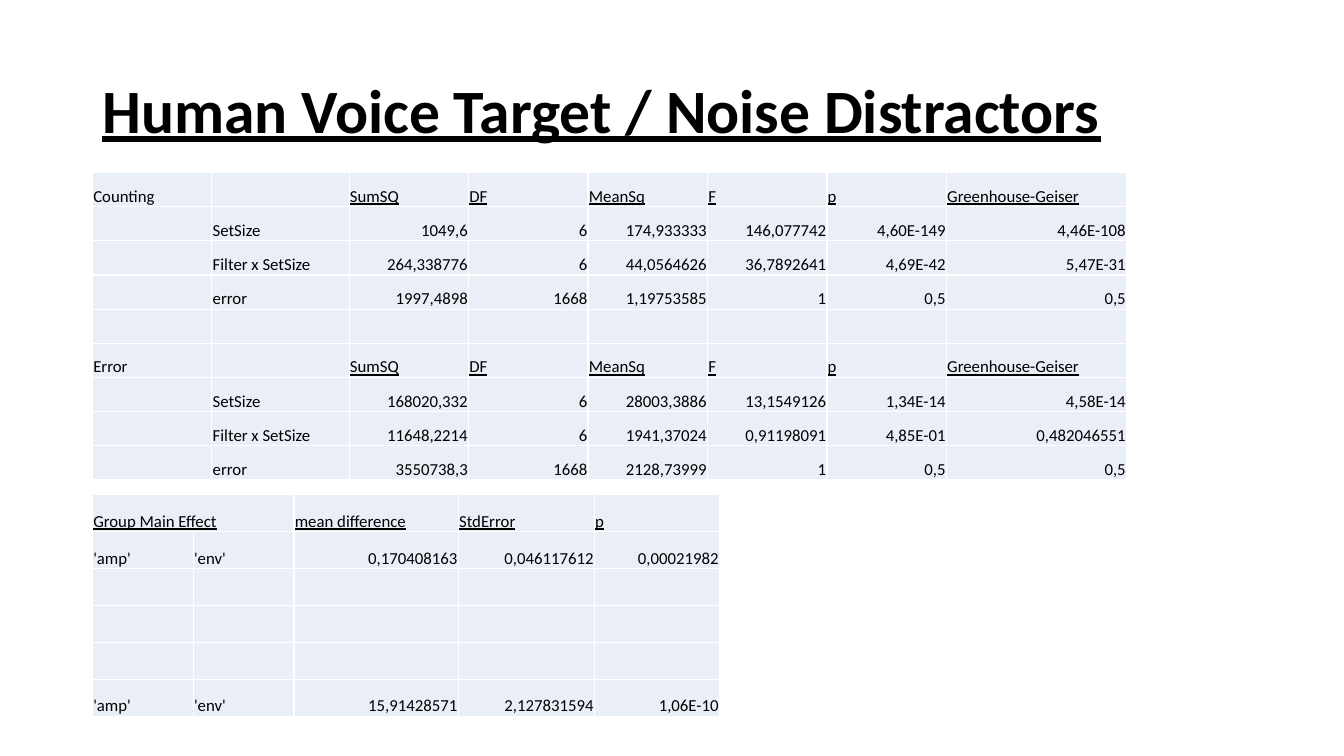
from dataclasses import dataclass

from lxml import etree
from pptx import Presentation
from pptx import util as u
from pptx.dml import color
from pptx.enum import text
from pptx.oxml import ns


@dataclass(frozen=True)
class Theme:
    font: str = "Calibri"
    ink: str = "000000"
    cell: str = "EAEFF7"
    border: str = "FFFFFF"
    title_size: int = 44
    table_size: int = 12
    border_width: int = 1


STATISTICS = ["SumSQ", "DF", "MeanSq", "F", "p", "Greenhouse-Geiser"]
COMPARISON = ["Group Main Effect", "mean difference", "StdError", "p"]
HEADINGS = {*STATISTICS, *COMPARISON}

ANOVA_ROWS = [
    ["Counting", "", *STATISTICS],
    ["", "SetSize", "1049,6", "6", "174,933333", "146,077742", "4,60E-149", "4,46E-108"],
    ["", "Filter x SetSize", "264,338776", "6", "44,0564626", "36,7892641", "4,69E-42", "5,47E-31"],
    ["", "error", "1997,4898", "1668", "1,19753585", "1", "0,5", "0,5"],
    [""] * 8,
    ["Error", "", *STATISTICS],
    ["", "SetSize", "168020,332", "6", "28003,3886", "13,1549126", "1,34E-14", "4,58E-14"],
    ["", "Filter x SetSize", "11648,2214", "6", "1941,37024", "0,91198091", "4,85E-01", "0,482046551"],
    ["", "error", "3550738,3", "1668", "2128,73999", "1", "0,5", "0,5"],
]
GROUP_ROWS = [
    [COMPARISON[0], "", *COMPARISON[1:]],
    ["'amp'", "'env'", "0,170408163", "0,046117612", "0,00021982"],
    *[[""] * 5] * 3,
    ["'amp'", "'env'", "15,91428571", "2,127831594", "1,06E-10"],
]


class SlideBuilder:
    def __init__(self, slide, theme):
        self.slide = slide
        self.theme = theme

    def style(self, p, size, bold=False, underline=False):
        p.font.name = self.theme.font
        p.font.size = u.Pt(size)
        p.font.bold = bold
        p.font.underline = underline
        p.font.color.rgb = color.RGBColor.from_string(self.theme.ink)

    def title(self, words, left, top, width, height):
        tf = self.slide.shapes.add_textbox(*map(u.Cm, (left, top, width, height))).text_frame
        tf.word_wrap = True
        tf.vertical_anchor = text.MSO_ANCHOR.MIDDLE
        p = tf.paragraphs[0]
        p.text = words
        p.line_spacing = 0.9
        self.style(p, self.theme.title_size, bold=True, underline=True)

    def borders(self, cell):
        tc_pr = cell._tc.get_or_add_tcPr()
        for i, side in enumerate(("lnL", "lnR", "lnT", "lnB")):
            ln = etree.Element(ns.qn(f"a:{side}"), w=str(u.Pt(self.theme.border_width)))
            fill = etree.SubElement(ln, ns.qn("a:solidFill"))
            etree.SubElement(fill, ns.qn("a:srgbClr"), val=self.theme.border)
            tc_pr.insert(i, ln)

    def cell(self, cell, words):
        cell.margin_left = cell.margin_right = cell.margin_top = u.Cm(0.02)
        cell.margin_bottom = 0
        cell.vertical_anchor = text.MSO_ANCHOR.BOTTOM
        cell.fill.solid()
        cell.fill.fore_color.rgb = color.RGBColor.from_string(self.theme.cell)
        self.borders(cell)
        p = cell.text_frame.paragraphs[0]
        p.text = words
        self.style(p, self.theme.table_size, underline=words in HEADINGS)
        if words[:1].isdigit():
            p.alignment = text.PP_ALIGN.RIGHT

    def table(self, rows, left, top, widths, row_height):
        frame = self.slide.shapes.add_table(
            len(rows), len(widths), u.Cm(left), u.Cm(top),
            u.Cm(sum(widths)), u.Cm(row_height * len(rows)),
        )
        table = frame.table
        table.first_row = table.horz_banding = False
        for column, width in zip(table.columns, widths):
            column.width = u.Cm(width)
        for row, values in zip(table.rows, rows):
            row.height = u.Cm(row_height)
            for cell, words in zip(row.cells, values):
                self.cell(cell, words)
        return table


def main():
    prs = Presentation()
    prs.slide_width, prs.slide_height = u.Cm(33.87), u.Cm(19.05)
    s = SlideBuilder(prs.slides.add_slide(prs.slide_layouts[6]), Theme())
    left = 2.33
    s.title("Human Voice Target / Noise Distractors", left, 1.01, 29.21, 3.68)
    s.table(ANOVA_ROWS, left, 4.35, [3.01, 3.46, *[3.01] * 5, 4.54], 0.86)
    groups = s.table(GROUP_ROWS, left, 12.47, [2.54, 2.54, 4.14, 3.43, 3.15], 0.93)
    groups.cell(0, 0).merge(groups.cell(0, 1))
    prs.save("out.pptx")


if __name__ == "__main__":
    main()
